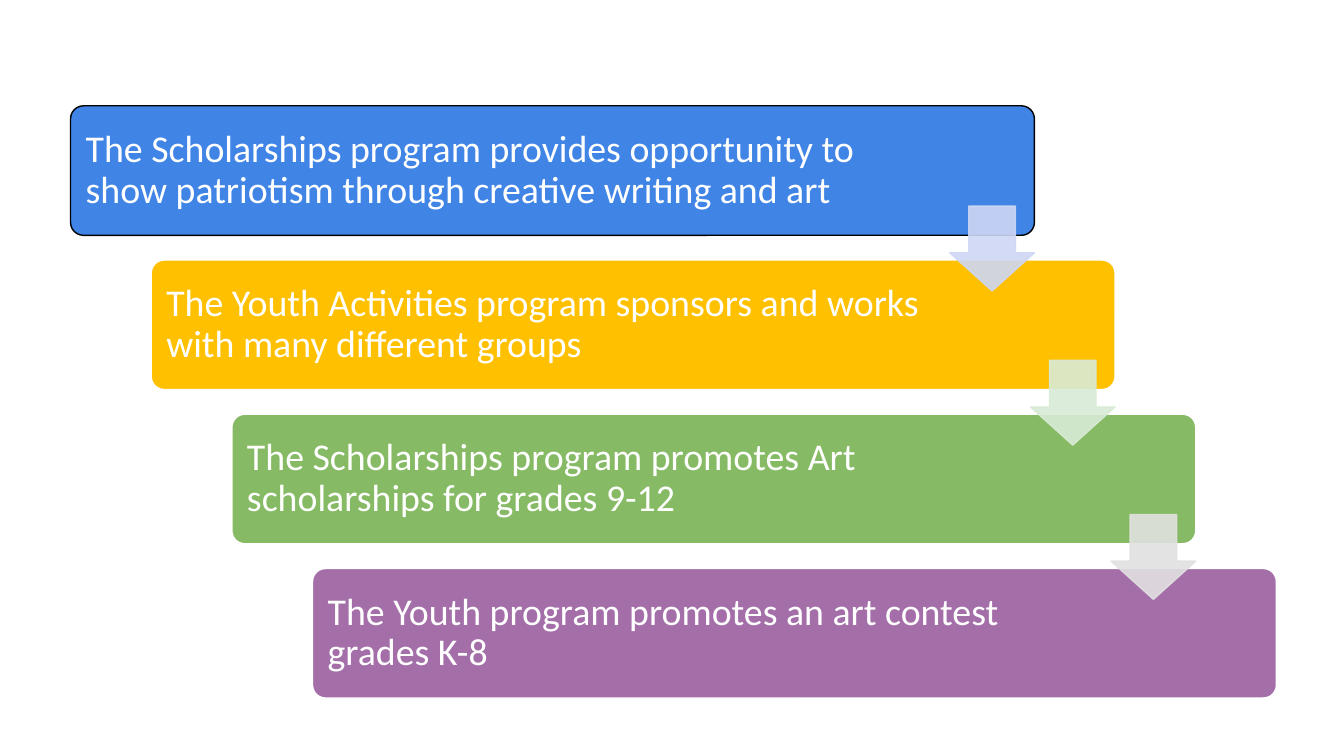
from dataclasses import dataclass

from lxml.etree import SubElement
from pptx import Presentation
from pptx.dml.color import RGBColor
from pptx.enum.shapes import MSO_SHAPE as SHAPE
from pptx.enum.text import MSO_ANCHOR as ANCHOR, PP_ALIGN as ALIGN
from pptx.oxml.ns import qn
from pptx.util import Inches, Pt


@dataclass(frozen=True)
class Theme:
    font: str = "Calibri"
    size: int = 27
    text: str = "FFFFFF"
    outline: str = "FFFFFF"
    first_outline: str = "000000"
    # Colour and opacity in percent
    steps: tuple = (("327BE5", 93), ("FFC000", 100), ("70AD47", 84), ("A46FA9", 100))
    arrows: tuple = (("CED7F5", 90), ("D9EBD7", 90), ("E1E1E1", 90))


class StaircaseSlide:
    """Places elements on a grid; each step moves one column and one row."""

    LEFT, TOP = 0.7, 1.05
    COLUMN, ROW = 0.8, 1.53

    def __init__(self, prs, theme):
        self.theme = theme
        self.slide = prs.slides.add_slide(prs.slide_layouts[6])

    def place(self, col, row, cols, rows):
        return (Inches(self.LEFT + col * self.COLUMN), Inches(self.TOP + row * self.ROW),
                Inches(cols * self.COLUMN), Inches(rows * self.ROW))

    def paint(self, fmt, color, opacity):
        fmt.solid()
        fmt.fore_color.rgb = RGBColor.from_string(color)
        if opacity < 100:
            clr = fmt._xPr.find(qn("a:solidFill"))[0]
            SubElement(clr, qn("a:alpha"), val=str(opacity * 1000))

    def shape(self, kind, box, adjustments, fill, line):
        sp = self.slide.shapes.add_shape(kind, *self.place(*box))
        sp.shadow.inherit = False
        for i, value in enumerate(adjustments):
            sp.adjustments[i] = value
        self.paint(sp.fill, *fill)
        self.paint(sp.line.fill, *line)
        sp.line.width = Pt(1)

    def step(self, i, text, cols):
        line = self.theme.outline if i else self.theme.first_outline
        self.shape(SHAPE.ROUNDED_RECTANGLE, (i, i, 11.95, 0.84), [0.1],
                   self.theme.steps[i], (line, 100))
        self.label(text, (i + 0.05, i + 0.02, cols, 0.8))

    def label(self, text, box):
        tf = self.slide.shapes.add_textbox(*self.place(*box)).text_frame
        tf.word_wrap = True
        tf.vertical_anchor = ANCHOR.MIDDLE
        tf.margin_left = tf.margin_right = tf.margin_top = tf.margin_bottom = Inches(0.11)
        p = tf.paragraphs[0]
        p.text = text
        p.alignment = ALIGN.LEFT
        p.line_spacing = 0.9
        p.font.name = self.theme.font
        p.font.size = Pt(self.theme.size)
        p.font.color.rgb = RGBColor.from_string(self.theme.text)

    def arrow(self, i, color):
        self.shape(SHAPE.DOWN_ARROW, (i + 10.9, i + 0.65, 1.05, 0.55), [0.55, 0.45],
                   color, color)


# Each statement with its text width in columns
STATEMENTS = [
    ("The Scholarships program provides opportunity to show patriotism "
     "through creative writing and art", 10.08),
    ("The Youth Activities program sponsors and works with many different groups", 9.8),
    ("The Scholarships program promotes Art scholarships for grades 9-12", 9.8),
    ("The Youth program promotes an art contest grades K-8", 9.8),
]


def main():
    prs = Presentation()
    prs.slide_width, prs.slide_height = Inches(13.33), Inches(7.5)
    theme = Theme()
    s = StaircaseSlide(prs, theme)

    # Steps
    for i, (text, cols) in enumerate(STATEMENTS):
        s.step(i, text, cols)

    # Arrows leading from each step to the next
    for i, color in enumerate(theme.arrows):
        s.arrow(i, color)

    prs.save("out.pptx")


if __name__ == "__main__":
    main()
